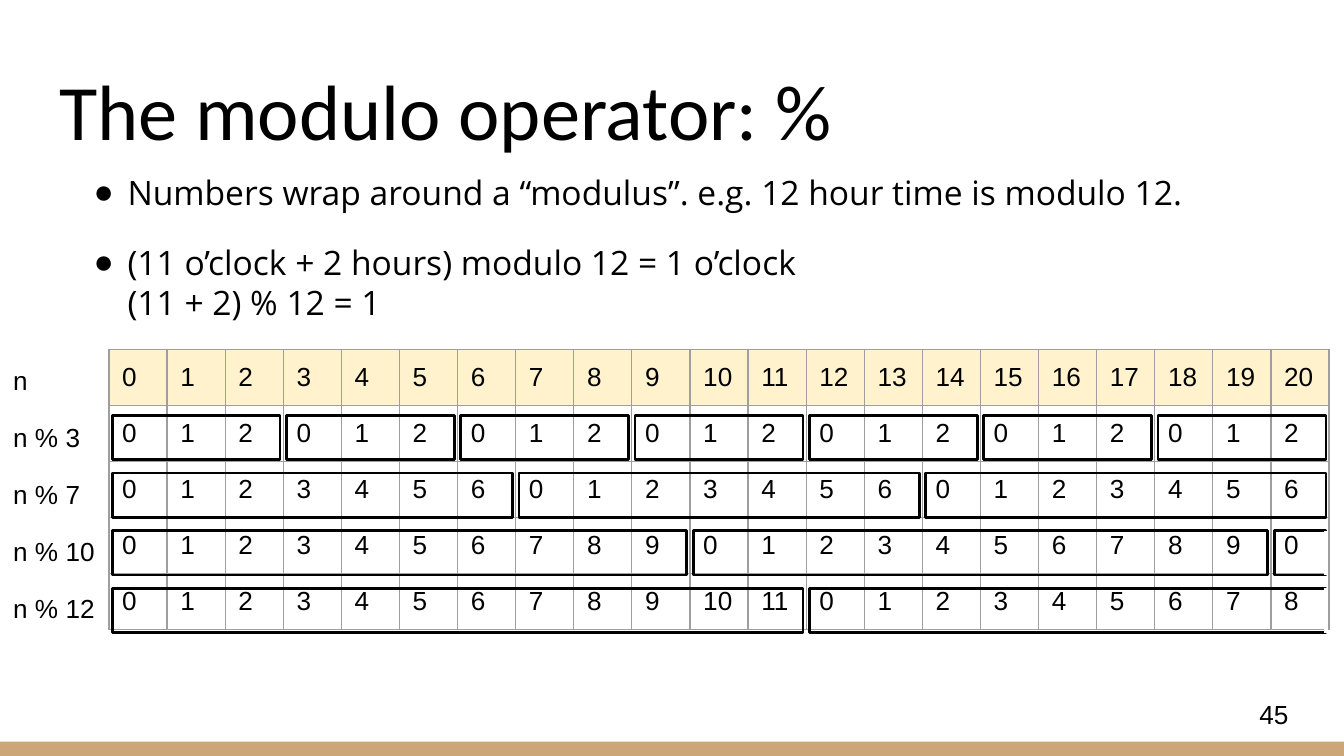
from lxml import etree
from pptx import Presentation
from pptx.dml.color import RGBColor
from pptx.enum.shapes import MSO_CONNECTOR, MSO_SHAPE
from pptx.enum.text import MSO_ANCHOR, MSO_AUTO_SIZE, PP_ALIGN
from pptx.oxml.ns import qn
from pptx.util import Cm, Pt

RECTANGLE = MSO_SHAPE.RECTANGLE
STRAIGHT = MSO_CONNECTOR.STRAIGHT
TOP, MIDDLE, BOTTOM = MSO_ANCHOR.TOP, MSO_ANCHOR.MIDDLE, MSO_ANCHOR.BOTTOM
LEFT = PP_ALIGN.LEFT
NO_AUTOFIT = MSO_AUTO_SIZE.NONE

COLORS = {"text": "000000", "paper": "FFFFFF", "bar": "CCA677",
          "header": "FFF2CC", "grid": "9E9E9E"}
INSET = 0.25

# Table geometry in centimetres
COUNT = 21
MODULI = [3, 7, 10, 12]
TABLE_LEFT, TABLE_TOP, TABLE_WIDTH = 2.06, 6.6, 23.06
COLUMN, ROW = TABLE_WIDTH / COUNT, 1.06
LABEL_TOP, LABEL_STEP = 6.63, 1.08
GROUP_TOP, GROUP_STEP, GROUP_HEIGHT = 7.85, 1.09, 0.84
GROUP_GAP = 0.06


def color(name):
    return RGBColor.from_string(COLORS[name])


class SlideBuilder:
    def __init__(self, presentation):
        self.slide = presentation.slides.add_slide(presentation.slide_layouts[1])
        self.shapes = self.slide.shapes

    def style_paragraph(self, paragraph, font, size):
        paragraph.alignment = LEFT
        paragraph.font.name = font
        paragraph.font.size = Pt(size)
        paragraph.font.color.rgb = color("text")

    def set_frame(self, holder, anchor):
        """Give a text frame or a table cell the common margins."""
        holder.margin_left = holder.margin_right = Cm(INSET)
        holder.margin_top = holder.margin_bottom = Cm(INSET)
        holder.vertical_anchor = anchor
        holder.word_wrap = True

    def place(self, shape, box, anchor):
        shape.left, shape.top, shape.width, shape.height = map(Cm, box)
        self.set_frame(shape.text_frame, anchor)
        shape.text_frame.auto_size = NO_AUTOFIT
        return shape.text_frame

    def title(self, text, box):
        frame = self.place(self.shapes.title, box, BOTTOM)
        frame.text = text
        self.style_paragraph(frame.paragraphs[0], "Calibri", 42)

    def bullets(self, items, box):
        frame = self.place(self.slide.placeholders[1], box, TOP)
        frame.text = "\n".join(items)
        for paragraph in frame.paragraphs:
            self.style_paragraph(paragraph, "Open Sans", 18)
            paragraph.line_spacing = 1.0
            paragraph.space_before = Pt(0)
            paragraph.space_after = Pt(16)
            properties = paragraph._p.get_or_add_pPr()
            properties.set("marL", str(Cm(1.27)))
            properties.set("indent", str(-Cm(0.64)))
            marker = etree.Element(qn("a:buChar"), char="●")
            properties.insert_element_before(marker, "a:tabLst", "a:defRPr")

    def label(self, text, box, anchor=TOP):
        frame = self.place(self.shapes.add_textbox(*map(Cm, box)), box, anchor)
        frame.text = text
        self.style_paragraph(frame.paragraphs[0], "Arial", 14)

    def rectangle(self, box, fill=None, line=None):
        shape = self.shapes.add_shape(RECTANGLE, *map(Cm, box))
        shape.shadow.inherit = False
        if fill:
            shape.fill.solid()
            shape.fill.fore_color.rgb = color(fill)
        else:
            shape.fill.background()
        if line:
            shape.line.color.rgb = color(line)
            shape.line.width = Pt(1.5)
        else:
            shape.line.fill.background()

    def vertical_line(self, x, top, bottom):
        line = self.shapes.add_connector(STRAIGHT, Cm(x), Cm(top), Cm(x), Cm(bottom))
        line.line.color.rgb = color("paper")
        line.line.width = Pt(2.25)
        etree.SubElement(line._element.spPr, qn("a:effectLst"))

    def cell_borders(self, cell):
        properties = cell._tc.get_or_add_tcPr()
        for position, side in enumerate(("a:lnL", "a:lnR", "a:lnT", "a:lnB")):
            border = etree.Element(qn(side), w=str(Pt(0.75)))
            solid = etree.SubElement(border, qn("a:solidFill"))
            etree.SubElement(solid, qn("a:srgbClr"), val=COLORS["grid"])
            properties.insert(position, border)

    def table(self, rows, box):
        table = self.shapes.add_table(len(rows), len(rows[0]), *map(Cm, box)).table
        table.first_row = table.horz_banding = False
        for column in table.columns:
            column.width = Cm(COLUMN)
        for r, values in enumerate(rows):
            table.rows[r].height = Cm(ROW)
            for c, value in enumerate(values):
                cell = table.cell(r, c)
                cell.text = str(value)
                self.set_frame(cell, TOP)
                self.style_paragraph(cell.text_frame.paragraphs[0], "Arial", 14)
                if r == 0:
                    cell.fill.solid()
                    cell.fill.fore_color.rgb = color("header")
                else:
                    cell.fill.background()
                self.cell_borders(cell)


def main():
    presentation = Presentation()
    presentation.slide_width, presentation.slide_height = Cm(25.4), Cm(14.29)
    builder = SlideBuilder(presentation)

    # Footer bar, heading and page number
    builder.rectangle((0, 14.02, 25.4, 0.27), fill="bar")
    builder.title("The modulo operator: %", (0.87, 0.89, 23.67, 2.31))
    builder.bullets([
        "Numbers wrap around a “modulus”. e.g. 12 hour time is modulo 12.",
        "(11 o’clock + 2 hours) modulo 12 = 1 o’clock\v(11 + 2) % 12 = 1",
    ], (0.89, 3, 23.67, 2.95))
    builder.label("45", (23.55, 12.96, 1.52, 1.09), MIDDLE)

    # Remainders of every n, one row per modulus
    numbers = range(COUNT)
    rows = [list(numbers)] + [[n % m for n in numbers] for m in MODULI]
    builder.table(rows, (TABLE_LEFT, TABLE_TOP, TABLE_WIDTH, ROW * len(rows)))

    # Row labels
    for row, text in enumerate(["n"] + [f"n % {m}" for m in MODULI]):
        builder.label(text, (0, LABEL_TOP + row * LABEL_STEP, 2.34, 1.09))

    # Frames around each full cycle; a cut-off last cycle stays open on the right
    for row, modulus in enumerate(MODULI):
        top = GROUP_TOP + row * GROUP_STEP
        for start in range(0, COUNT, modulus):
            length = min(modulus, COUNT - start)
            left = TABLE_LEFT + start * COLUMN + GROUP_GAP
            width = length * COLUMN - 2 * GROUP_GAP
            builder.rectangle((left, top, width, GROUP_HEIGHT), line="text")
        if COUNT % modulus:
            builder.vertical_line(left + width, top, top + GROUP_HEIGHT)

    presentation.save("out.pptx")


if __name__ == "__main__":
    main()
